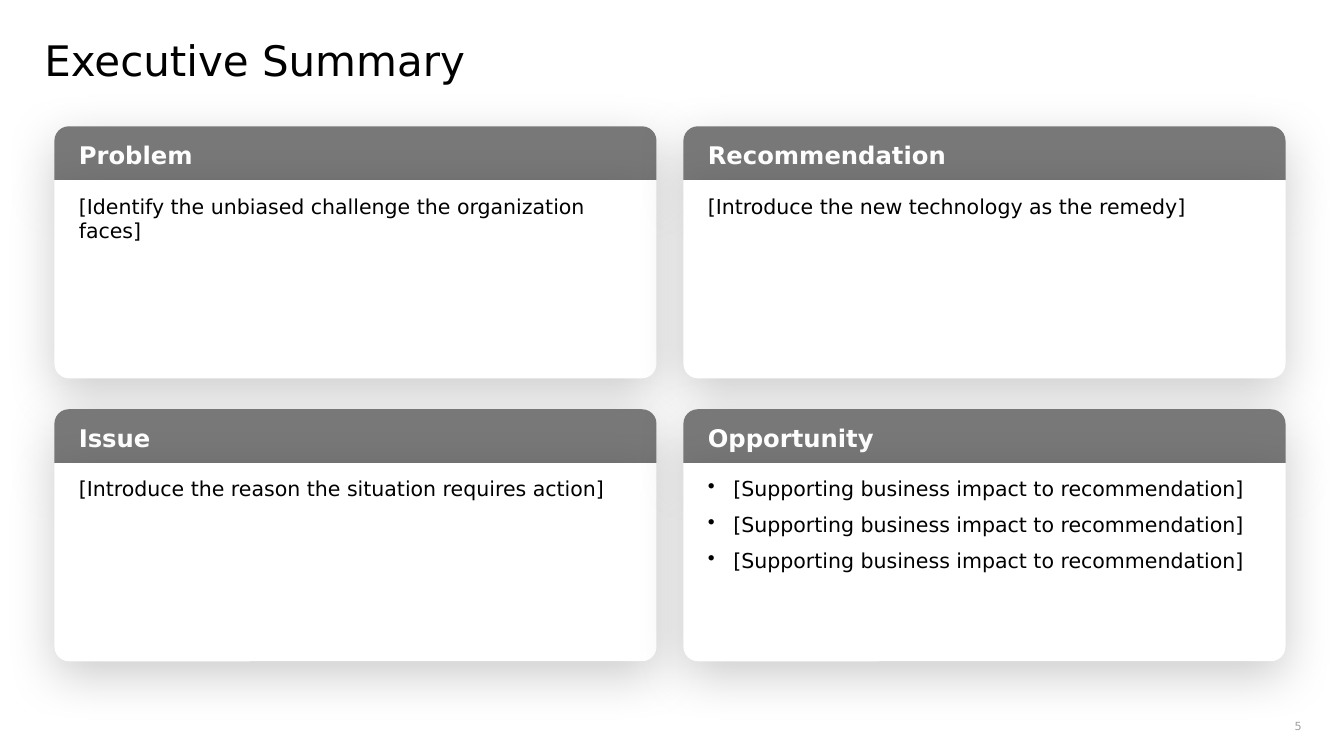
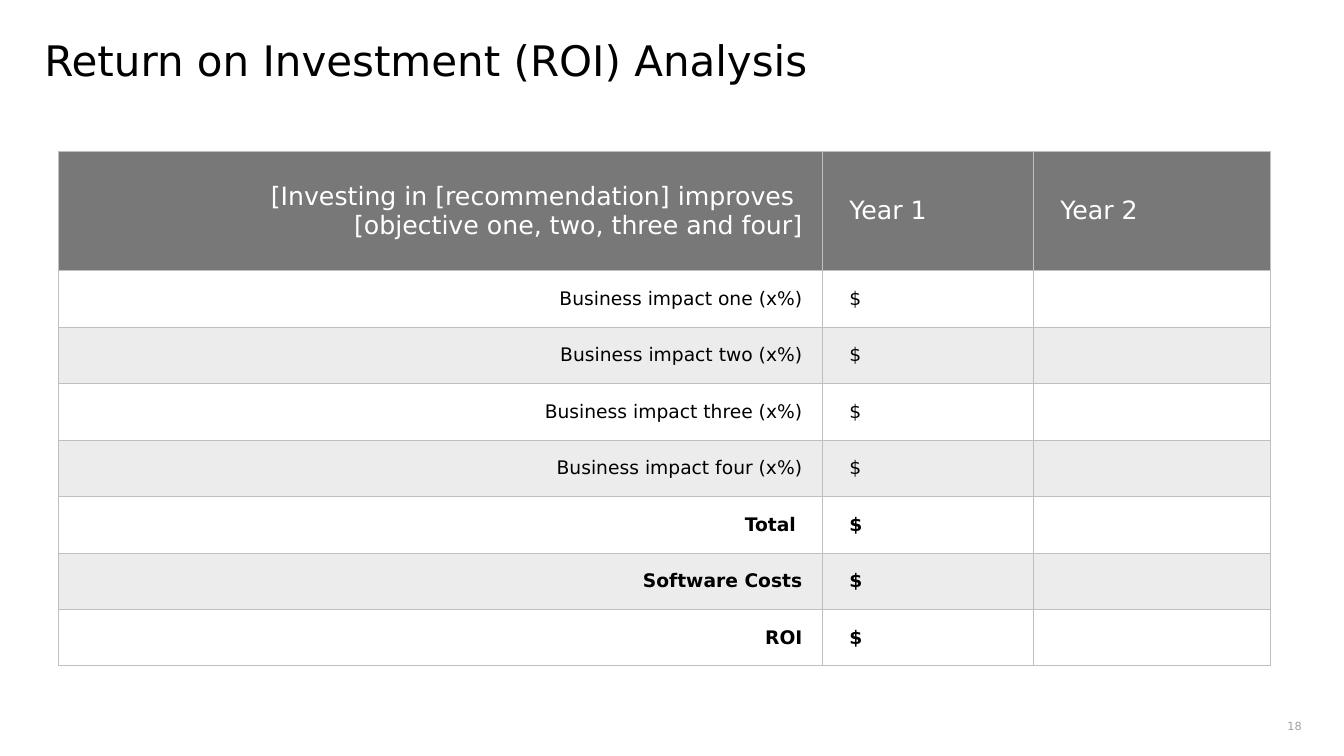
from lxml import etree
from pptx import Presentation, util as u
from pptx.dml.color import RGBColor
from pptx.enum import shapes, text
from pptx.oxml import ns

FONT = "DejaVu Sans"
BLACK, WHITE = "000000", "FFFFFF"
DARK, BAND, RULE, FAINT = "787878", "ECECEC", "BFBFBF", "A0A0A0"

CARD_LEFTS = (0.81, 10.17)
CARD_TOPS = (1.88, 6.09)
CARD_WIDTH, HEADER_HEIGHT, BODY_HEIGHT = 8.96, 0.8, 2.95

IMPACT = "[Supporting business impact to recommendation]"
CARDS = [
    ("Problem", ["[Identify the unbiased challenge the organization faces]"]),
    ("Recommendation", ["[Introduce the new technology as the remedy]"]),
    ("Issue", ["[Introduce the reason the situation requires action]"]),
    ("Opportunity", [IMPACT] * 3),
]

ROI_HEADER = ("[Investing in [recommendation] improves \v"
              "[objective one, two, three and four]", "Year 1", "Year 2")
IMPACT_ROWS = [f"Business impact {number} (x%)"
               for number in ("one", "two", "three", "four")]
SUMMARY_ROWS = ["Total ", "Software Costs", "ROI"]
COLUMN_WIDTHS = (11.37, 3.14, 3.53)
HEADER_ROW, BODY_ROW = 1.78, 0.84


def rgb(value):
    return RGBColor.from_string(value)


def inches(*values):
    return [u.Inches(value) for value in values]


def add_xml(parent, tag, **attributes):
    return etree.SubElement(parent, ns.qn(tag), attributes)


def style(para, size, color, bold=False, align=text.PP_ALIGN.LEFT):
    para.alignment = align
    font = para.font
    font.name, font.size, font.bold = FONT, u.Pt(size), bold
    font.color.rgb = rgb(color)


def set_insets(holder, left, top, right, bottom):
    """Set the margins of a text frame or a table cell."""
    holder.margin_left, holder.margin_top = inches(left, top)
    holder.margin_right, holder.margin_bottom = inches(right, bottom)


def add_text(page, place, words, insets):
    frame = page.shapes.add_textbox(*inches(*place)).text_frame
    frame.word_wrap = True
    set_insets(frame, *insets)
    frame.text = words
    return frame


def add_page(deck, title, number):
    page = deck.slides.add_slide(deck.slide_layouts[6])
    heading = add_text(page, (0.66, 0.6, 18.68, 0.8), title, (0, 0, 0, 0))
    heading.paragraphs[0].line_spacing = 0.9
    style(heading.paragraphs[0], 45, BLACK)
    footer = add_text(page, (18.91, 10.68, 0.56, 0.26), str(number),
                      (0.1, 0.05, 0.1, 0.05))
    footer.vertical_anchor = text.MSO_ANCHOR.MIDDLE
    style(footer.paragraphs[0], 12, FAINT, align=text.PP_ALIGN.RIGHT)
    return page


def add_shadow(shape):
    shape.shadow.inherit = False
    effects = shape._element.spPr.find(ns.qn("a:effectLst"))
    shadow = add_xml(effects, "a:outerShdw", blurRad=str(u.Pt(54)),
                     dist=str(u.Pt(14.7)), dir="5400000", algn="t",
                     rotWithShape="0")
    color = add_xml(shadow, "a:srgbClr", val=BLACK)
    add_xml(color, "a:alpha", val="20000")


def add_panel(page, place, rounding, fill, top_inset, lines):
    """Add one shadowed half of a card and return its paragraphs."""
    panel = page.shapes.add_shape(
        shapes.MSO_SHAPE.ROUND_2_SAME_RECTANGLE, *inches(*place))
    panel.adjustments[0], panel.adjustments[1] = rounding
    panel.fill.solid()
    panel.fill.fore_color.rgb = rgb(fill)
    panel.line.fill.background()
    add_shadow(panel)
    frame = panel.text_frame
    frame.word_wrap = True
    frame.vertical_anchor = text.MSO_ANCHOR.TOP
    set_insets(frame, 0.3, top_inset, 0.3, 0.05)
    frame.text = "\n".join(lines)
    for para in frame.paragraphs[1:]:
        para.space_before = u.Pt(12)
    return frame.paragraphs


def add_bullet(para):
    properties = para._p.get_or_add_pPr()
    indent = u.Inches(0.38)
    properties.set("marL", str(indent))
    properties.set("indent", str(-indent))
    add_xml(properties, "a:buChar", char="•")


def add_card(page, left, top, heading, lines):
    header = add_panel(page, (left, top, CARD_WIDTH, HEADER_HEIGHT),
                       (0.268, 0), DARK, 0.15, [heading])
    style(header[0], 26, WHITE, bold=True)
    body = add_panel(page, (left, top + HEADER_HEIGHT, CARD_WIDTH, BODY_HEIGHT),
                     (0, 0.074), WHITE, 0.2, lines)
    for para in body:
        if len(lines) > 1:
            add_bullet(para)
        style(para, 22, BLACK)


def add_borders(cell):
    properties = cell._tc.get_or_add_tcPr()
    for side in ("a:lnL", "a:lnR", "a:lnT", "a:lnB"):
        line = add_xml(properties, side, w=str(u.Pt(1)))
        fill = add_xml(line, "a:solidFill")
        add_xml(fill, "a:srgbClr", val=RULE)


def fill_cell(cell, words, is_label, fill, size, color, bold):
    add_borders(cell)
    cell.fill.solid()
    cell.fill.fore_color.rgb = rgb(fill)
    cell.vertical_anchor = text.MSO_ANCHOR.MIDDLE
    set_insets(cell, *((0.1, 0.05, 0.3, 0.05) if is_label
                       else (0.4, 0.05, 0.1, 0.05)))
    cell.text = words
    style(cell.text_frame.paragraphs[0], size, color, bold,
          text.PP_ALIGN.RIGHT if is_label else text.PP_ALIGN.LEFT)


def add_roi_table(page):
    labels = IMPACT_ROWS + SUMMARY_ROWS
    rows = [ROI_HEADER] + [(label, "$", "") for label in labels]
    height = HEADER_ROW + BODY_ROW * len(labels)
    table = page.shapes.add_table(
        len(rows), len(COLUMN_WIDTHS),
        *inches(0.87, 2.25, sum(COLUMN_WIDTHS), height)).table
    for column, width in zip(table.columns, COLUMN_WIDTHS):
        column.width = u.Inches(width)
    for r, row in enumerate(rows):
        table.rows[r].height = u.Inches(BODY_ROW if r else HEADER_ROW)
        if r == 0:
            look = DARK, 27, WHITE, False
        else:
            look = (WHITE if r % 2 else BAND), 20, BLACK, row[0] in SUMMARY_ROWS
        for c, words in enumerate(row):
            fill_cell(table.cell(r, c), words, c == 0, *look)


def main():
    deck = Presentation()
    deck.slide_width, deck.slide_height = inches(20, 11.25)

    summary = add_page(deck, "Executive Summary", 5)
    places = [(left, top) for top in CARD_TOPS for left in CARD_LEFTS]
    for (left, top), (heading, lines) in zip(places, CARDS):
        add_card(summary, left, top, heading, lines)

    analysis = add_page(deck, "Return on Investment (ROI) Analysis", 18)
    add_roi_table(analysis)

    deck.save("out.pptx")


if __name__ == "__main__":
    main()
